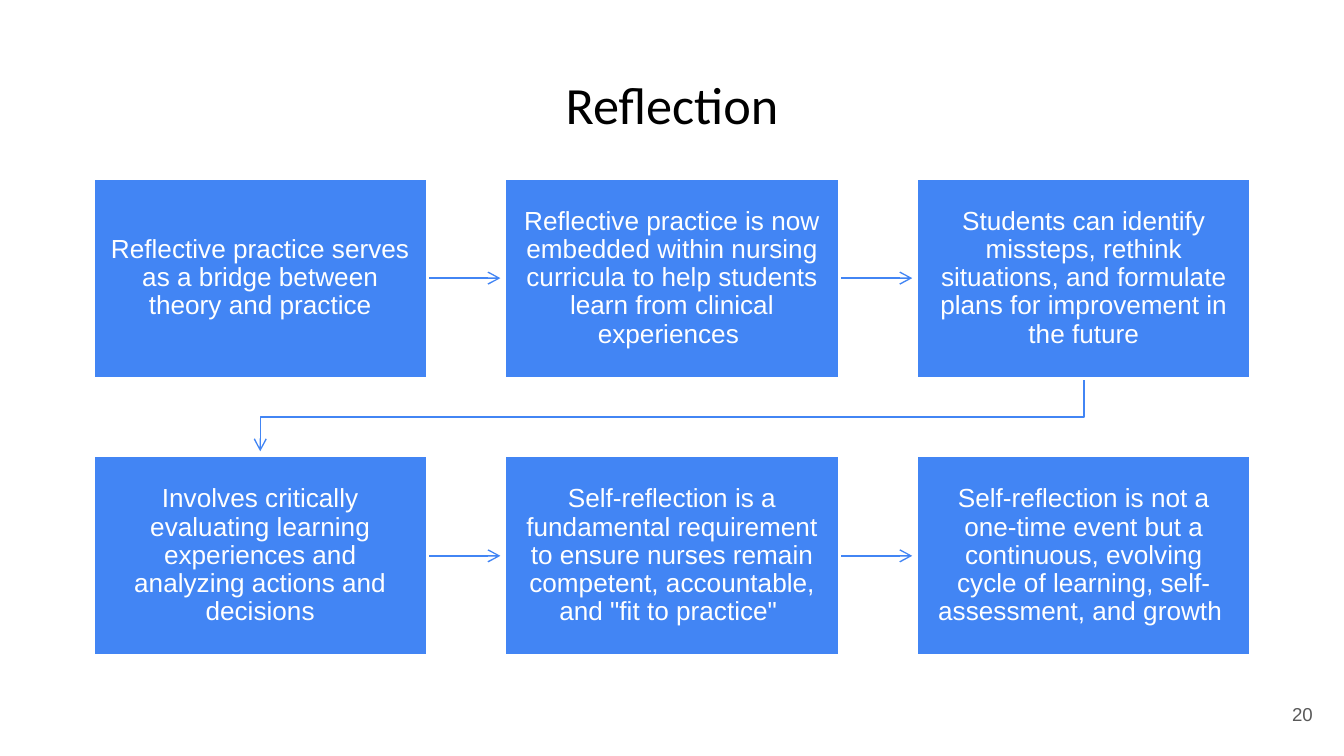
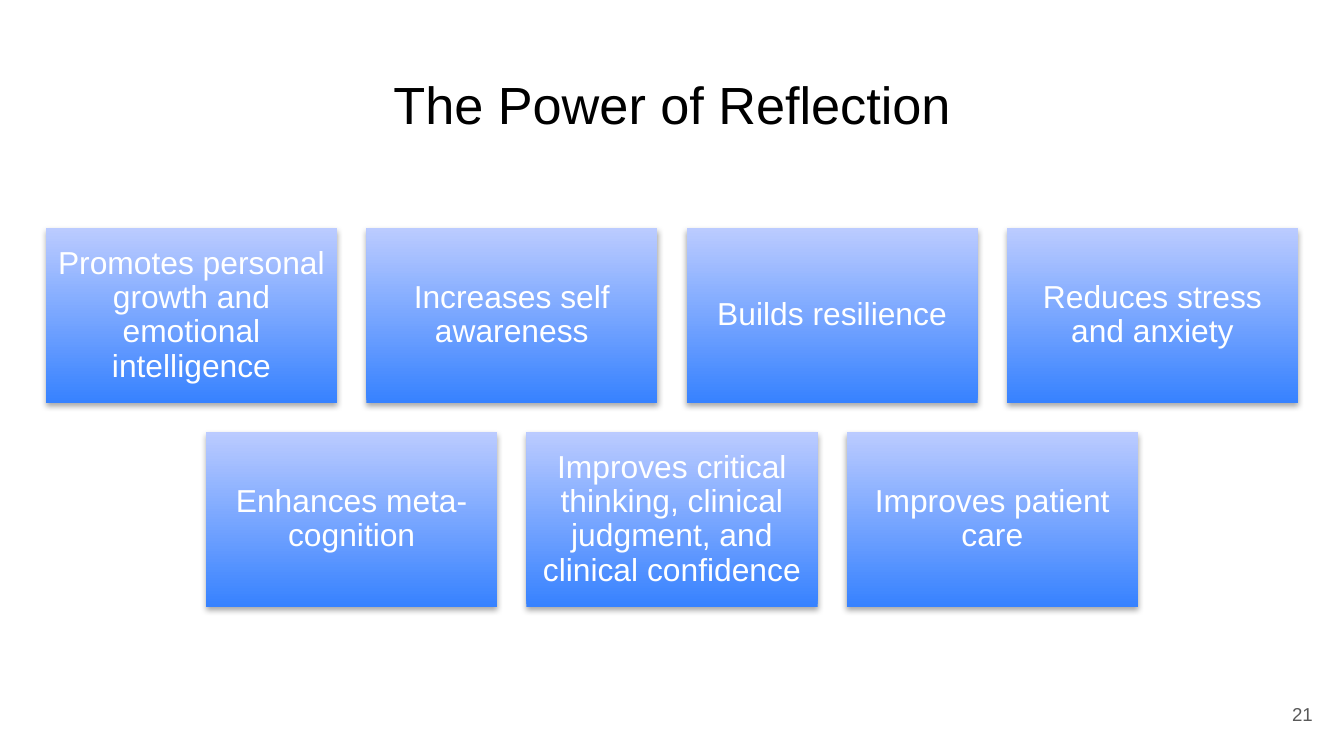
from dataclasses import dataclass

from pptx import Presentation
from pptx.dml.color import RGBColor
from pptx.enum.shapes import MSO_CONNECTOR, MSO_SHAPE
from pptx.enum.text import MSO_ANCHOR, MSO_AUTO_SIZE, PP_ALIGN
from pptx.oxml.ns import qn
from pptx.oxml.xmlchemy import OxmlElement
from pptx.util import Pt

RECTANGLE = MSO_SHAPE.RECTANGLE
STRAIGHT = MSO_CONNECTOR.STRAIGHT
MIDDLE = MSO_ANCHOR.MIDDLE
NO_AUTOFIT = MSO_AUTO_SIZE.NONE
CENTER, RIGHT = PP_ALIGN.CENTER, PP_ALIGN.RIGHT
TITLE_ONLY = 5
RIGHT_SIDE = 3


@dataclass(frozen=True)
class Theme:
    width: float = 720
    height: float = 405
    white: RGBColor = RGBColor.from_string("FFFFFF")
    black: RGBColor = RGBColor.from_string("000000")
    grey: RGBColor = RGBColor.from_string("595959")
    blue: RGBColor = RGBColor.from_string("4285F4")
    gradient_bottom: RGBColor = RGBColor.from_string("3782FF")
    gradient_top: RGBColor = RGBColor.from_string("BBCBFF")
    body_font: str = "Arial"
    title_size: float = 28
    step_size: float = 14
    benefit_size: float = 17
    number_size: float = 10
    line_spacing: float = 0.9
    arrow_width: float = 0.75


THEME = Theme()

STEP_ROWS = [
    [
        "Reflective practice serves as a bridge between theory and practice",
        "Reflective practice is now embedded within nursing curricula to help "
        "students learn from clinical experiences ",
        "Students can identify missteps, rethink situations, and formulate "
        "plans for improvement in the future",
    ],
    [
        "Involves critically evaluating learning experiences and analyzing "
        "actions and decisions",
        "Self-reflection is a fundamental requirement to ensure nurses remain "
        'competent, accountable, and "fit to practice" ',
        "Self-reflection is not a one-time event but a continuous, evolving "
        "cycle of learning, self-assessment, and growth ",
    ],
]

BENEFIT_ROWS = [
    [
        "Promotes personal growth and emotional intelligence",
        "Increases self awareness",
        "Builds resilience",
        "Reduces stress and anxiety",
    ],
    [
        "Enhances meta-cognition",
        "Improves critical thinking, clinical judgment, and clinical confidence",
        "Improves patient care",
    ],
]


def write_text(shape, text, size, color, align=CENTER, font=THEME.body_font,
               insets=(7.2, 7.2), spacing=THEME.line_spacing):
    """Fill a shape with one paragraph; insets are (horizontal, vertical)."""
    frame = shape.text_frame
    frame.word_wrap = True
    frame.auto_size = NO_AUTOFIT
    frame.vertical_anchor = MIDDLE
    frame.margin_left = frame.margin_right = Pt(insets[0])
    frame.margin_top = frame.margin_bottom = Pt(insets[1])
    frame.text = text
    paragraph = frame.paragraphs[0]
    paragraph.alignment = align
    paragraph.line_spacing = spacing
    paragraph.font.name = font
    paragraph.font.size = Pt(size)
    paragraph.font.color.rgb = color


def add_titled_slide(prs, title, number, title_font=THEME.body_font):
    slide = prs.slides.add_slide(prs.slide_layouts[TITLE_ONLY])
    heading = slide.shapes.title
    heading.left, heading.top = Pt(24.5), Pt(35)
    heading.width, heading.height = Pt(THEME.width - 2 * 24.5), Pt(45)
    write_text(heading, title, THEME.title_size, THEME.black, font=title_font)

    page_number = slide.shapes.add_textbox(Pt(667.2), Pt(367.2), Pt(43.2), Pt(31))
    write_text(page_number, str(number), THEME.number_size, THEME.grey,
               align=RIGHT, spacing=1.0)
    return slide


def centered_cells(rows, width, height, gap, top):
    """Yield (row, column, left, top, text), each row centred on the slide."""
    for row, texts in enumerate(rows):
        row_width = len(texts) * (width + gap) - gap
        row_left = (THEME.width - row_width) / 2
        for column, text in enumerate(texts):
            yield (row, column, row_left + column * (width + gap),
                   top + row * (height + gap), text)


def add_box(slide, left, top, width, height):
    box = slide.shapes.add_shape(RECTANGLE, Pt(left), Pt(top), Pt(width), Pt(height))
    box.shadow.inherit = False
    return box


def add_step(slide, left, top, width, height, text):
    step = add_box(slide, left, top, width, height)
    step.fill.solid()
    step.fill.fore_color.rgb = THEME.blue
    step.line.color.rgb = THEME.white
    step.line.width = Pt(2)
    write_text(step, text, THEME.step_size, THEME.white, insets=(8.8, 9.2))
    return step


def add_benefit(slide, left, top, width, height, text):
    benefit = add_box(slide, left, top, width, height)
    benefit.fill.gradient()
    benefit.fill.gradient_angle = 90
    bottom_stop, top_stop = benefit.fill.gradient_stops
    bottom_stop.color.rgb = THEME.gradient_bottom
    top_stop.color.rgb = THEME.gradient_top
    benefit.line.fill.background()
    add_drop_shadow(benefit)
    write_text(benefit, text, THEME.benefit_size, THEME.white, insets=(5, 5))


def add_drop_shadow(shape):
    shadow = OxmlElement("a:outerShdw")
    shadow.set("blurRad", str(Pt(3.1)))
    shadow.set("dist", str(Pt(1.8)))
    shadow.set("dir", "5400000")
    shadow.set("rotWithShape", "0")
    color = OxmlElement("a:srgbClr")
    color.set("val", str(THEME.black))
    alpha = OxmlElement("a:alpha")
    alpha.set("val", "35000")
    color.append(alpha)
    shadow.append(color)
    shape.element.spPr.find(qn("a:effectLst")).append(shadow)


def style_arrow(arrow):
    """Give a connector or open outline a thin blue line with an open head."""
    arrow.line.color.rgb = THEME.blue
    arrow.line.width = Pt(THEME.arrow_width)
    head = OxmlElement("a:tailEnd")
    head.set("type", "arrow")
    properties = arrow.element.spPr
    properties.find(qn("a:ln")).append(head)
    properties.append(OxmlElement("a:effectLst"))


def add_straight_arrow(slide, left, right, y):
    arrow = slide.shapes.add_connector(STRAIGHT, Pt(left), Pt(y), Pt(right), Pt(y))
    style_arrow(arrow)
    return arrow


def add_return_arrow(slide, start_x, start_y, turn_y, end_x, end_y):
    """Lead from the end of one row down and back to the start of the next."""
    builder = slide.shapes.build_freeform(Pt(start_x), Pt(start_y))
    corners = [(start_x, turn_y), (end_x, turn_y), (end_x, end_y)]
    builder.add_line_segments([(Pt(x), Pt(y)) for x, y in corners], close=False)
    arrow = builder.convert_to_shape()
    arrow.fill.background()
    style_arrow(arrow)


def build_reflection(prs):
    slide = add_titled_slide(prs, "Reflection", 20, title_font="Calibri")
    width, height, gap, head_gap = 179.4, 107.6, 41.2, 2.2
    last_column = len(STEP_ROWS[0]) - 1
    for row, column, left, top, text in centered_cells(
            STEP_ROWS, width, height, gap, top=95.2):
        right, bottom = left + width, top + height
        arrow = None
        # Arrows come first, so that the white box edges cover their starts.
        if column < last_column:
            arrow = add_straight_arrow(slide, right, right + gap - head_gap,
                                       top + height / 2)
        elif row == 0:
            first_center = left - last_column * (width + gap) + width / 2
            add_return_arrow(slide, left + width / 2, bottom, bottom + gap / 2,
                             first_center, bottom + gap - head_gap)
        step = add_step(slide, left, top, width, height, text)
        if arrow is not None:
            arrow.begin_connect(step, RIGHT_SIDE)


def build_power_of_reflection(prs):
    slide = add_titled_slide(prs, "The Power of Reflection", 21)
    width, height = 156, 93.6
    for _, _, left, top, text in centered_cells(
            BENEFIT_ROWS, width, height, gap=15.6, top=122.3):
        add_benefit(slide, left, top, width, height, text)


def main():
    prs = Presentation()
    prs.slide_width, prs.slide_height = Pt(THEME.width), Pt(THEME.height)
    build_reflection(prs)
    build_power_of_reflection(prs)
    prs.save("out.pptx")


if __name__ == "__main__":
    main()
